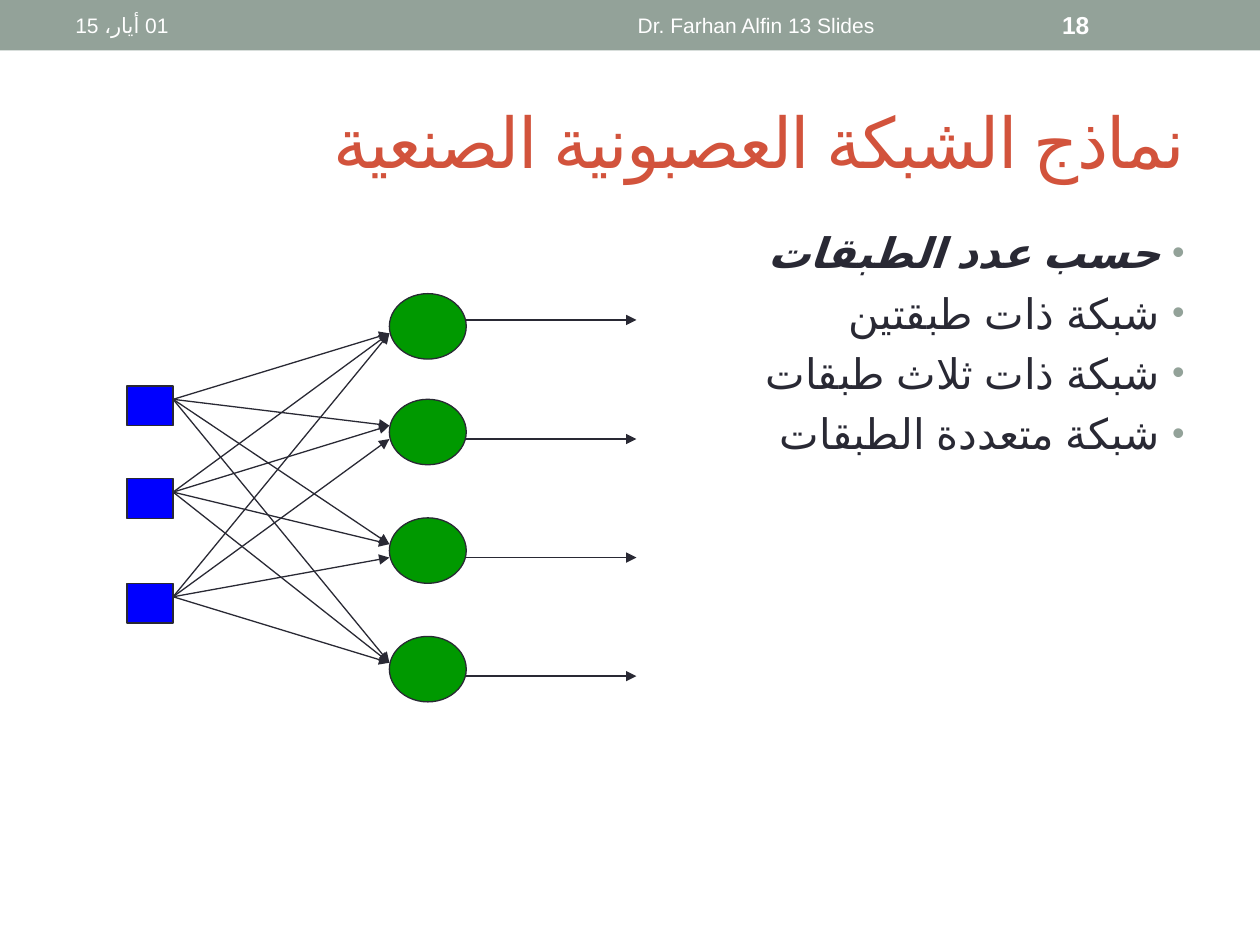
from dataclasses import dataclass

from lxml.etree import SubElement
from pptx import Presentation
from pptx.dml.color import RGBColor
from pptx.enum.lang import MSO_LANGUAGE_ID
from pptx.enum.shapes import MSO_CONNECTOR, MSO_SHAPE
from pptx.enum.text import MSO_ANCHOR, PP_ALIGN
from pptx.oxml import parse_xml
from pptx.oxml.ns import nsdecls, qn
from pptx.util import Cm, Pt


@dataclass(frozen=True)
class Theme:
    font: str = "Arial"
    band: str = "93A299"
    title: str = "D2533C"
    ink: str = "292934"
    light: str = "FFFFFF"
    neuron: str = "009900"
    source: str = "0000FF"
    title_size: int = 40
    body_size: int = 24
    number_size: int = 14
    header_size: int = 12
    body_gap: float = 5.6
    line_width: float = 0.75


class SlideBuilder:
    def __init__(self, slide, theme):
        self.slide = slide
        self.theme = theme
        self.shapes = slide.shapes

    def start_group(self):
        self.shapes = self.slide.shapes.add_group_shape().shapes

    def shape(self, kind, box, fill, outline=None):
        shape = self.shapes.add_shape(kind, *map(Cm, box))
        shape.shadow.inherit = False
        shape.fill.solid()
        shape.fill.fore_color.rgb = RGBColor.from_string(fill)
        if outline:
            shape.line.color.rgb = RGBColor.from_string(outline)
            shape.line.width = Pt(self.theme.line_width)
        else:
            shape.line.fill.background()

    def arrow(self, start, end):
        connector = self.shapes.add_connector(
            MSO_CONNECTOR.STRAIGHT, *map(Cm, start + end))
        connector.line.color.rgb = RGBColor.from_string(self.theme.ink)
        connector.line.width = Pt(self.theme.line_width)
        line = connector.line._get_or_add_ln()
        SubElement(line, qn("a:tailEnd"), type="triangle")
        SubElement(connector._element.spPr, qn("a:effectLst"))

    def text(self, box, lines, size, color, align=PP_ALIGN.LEFT,
             anchor=MSO_ANCHOR.MIDDLE):
        frame = self.shapes.add_textbox(*map(Cm, box)).text_frame
        frame.word_wrap = True
        frame.vertical_anchor = anchor
        frame.text = "\n".join(lines)
        for paragraph in frame.paragraphs:
            paragraph.alignment = align
            paragraph.font.size = Pt(size)
            paragraph.font.color.rgb = RGBColor.from_string(color)
            paragraph.font.name = self.theme.font
            properties = paragraph._p.get_or_add_pPr()
            properties.set("rtl", "1")
            defaults = properties.find(qn("a:defRPr"))
            SubElement(defaults, qn("a:cs"), typeface=self.theme.font)
            for run in paragraph.runs:
                run.font.language_id = MSO_LANGUAGE_ID.ARABIC
        return frame.paragraphs

    def title(self, box, words):
        paragraph = self.text(box, [words], self.theme.title_size,
                              self.theme.title, PP_ALIGN.RIGHT)[0]
        paragraph._p.pPr.find(qn("a:defRPr")).set("spc", "-100")

    def bullets(self, box, lines):
        paragraphs = self.text(box, lines, self.theme.body_size, self.theme.ink,
                               PP_ALIGN.RIGHT, MSO_ANCHOR.TOP)
        for paragraph in paragraphs:
            paragraph.space_before = Pt(self.theme.body_gap)
            properties = paragraph._p.pPr
            properties.set("marL", str(Cm(0.5)))
            properties.set("indent", str(-Cm(0.5)))
            defaults = properties.find(qn("a:defRPr"))
            for mark in (
                f'<a:buClr {nsdecls("a")}><a:srgbClr val="{self.theme.band}"/></a:buClr>',
                f'<a:buSzPct {nsdecls("a")} val="85000"/>',
                f'<a:buFont {nsdecls("a")} typeface="{self.theme.font}"/>',
                f'<a:buChar {nsdecls("a")} char="•"/>',
            ):
                defaults.addprevious(parse_xml(mark))
        return paragraphs

    def network(self):
        source_left, source_width, source_height = 2.56, 0.93, 0.8
        neuron_left, neuron_width, neuron_height = 7.85, 1.55, 1.32
        output_end = 12.83
        upper, lower = 0.53, 0.8
        source_tops = (7.78, 9.65, 11.76)
        neurons = (
            (5.92, (lower, lower, lower), upper),
            (8.05, (upper, upper, lower), lower),
            (10.44, (upper, upper, lower), lower),
            (12.83, (upper, upper, upper), lower),
        )
        self.start_group()
        for top in source_tops:
            self.shape(MSO_SHAPE.RECTANGLE,
                       (source_left, top, source_width, source_height),
                       self.theme.source, self.theme.ink)
        for top, entries, leaving in neurons:
            self.shape(MSO_SHAPE.OVAL,
                       (neuron_left, top, neuron_width, neuron_height),
                       self.theme.neuron, self.theme.ink)
            for source_top, entry in zip(source_tops, entries):
                self.arrow((source_left + source_width, source_top + 0.27),
                           (neuron_left, top + entry))
            self.arrow((neuron_left + neuron_width, top + leaving),
                       (output_end, top + leaving))


def main():
    theme = Theme()
    presentation = Presentation()
    presentation.slide_width, presentation.slide_height = Cm(25.4), Cm(19.05)
    slide = presentation.slides.add_slide(presentation.slide_layouts[6])
    builder = SlideBuilder(slide, theme)

    builder.shape(MSO_SHAPE.RECTANGLE, (0, 0, 25.4, 1.02), theme.band)
    builder.title((1.27, 1.47, 22.86, 2.74), "نماذج الشبكة العصبونية الصنعية")
    heading = builder.bullets((1.27, 4.45, 22.86, 13.54), [
        "حسب عدد الطبقات",
        "شبكة ذات طبقتين",
        "شبكة ذات ثلاث طبقات",
        "شبكة متعددة الطبقات",
    ])[0]
    heading.font.bold = heading.font.italic = True

    builder.text((1.27, 0.05, 8.05, 0.91), ["01 أيار، 15"],
                 theme.header_size, theme.light)
    builder.text((9.53, 0.05, 11.43, 0.91), ["Dr. Farhan Alfin 13 Slides"],
                 theme.header_size, theme.light, PP_ALIGN.CENTER)
    number = builder.text((21.16, 0.05, 2.97, 0.91), ["18"],
                          theme.number_size, theme.light)[0]
    number.font.bold = True

    builder.network()
    presentation.save("out.pptx")


if __name__ == "__main__":
    main()
